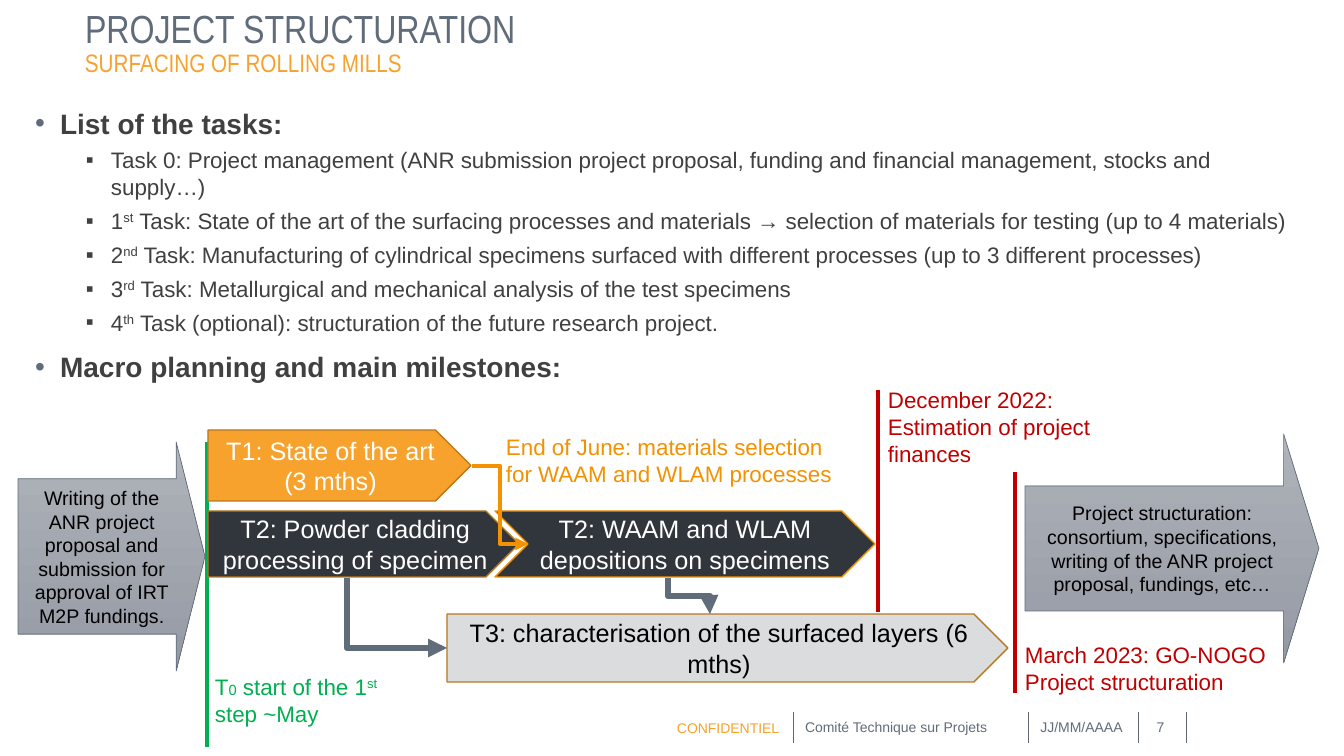
from lxml import etree
from pptx import Presentation
from pptx.dml.color import RGBColor
from pptx.enum.shapes import MSO_CONNECTOR, MSO_SHAPE
from pptx.enum.text import MSO_ANCHOR, MSO_AUTO_SIZE, PP_ALIGN
from pptx.oxml.ns import qn
from pptx.util import Emu, Pt

STRAIGHT, ELBOW = MSO_CONNECTOR.STRAIGHT, MSO_CONNECTOR.ELBOW
PENTAGON, CHEVRON, ARROW = MSO_SHAPE.PENTAGON, MSO_SHAPE.CHEVRON, MSO_SHAPE.RIGHT_ARROW
TOP, MIDDLE, BOTTOM = MSO_ANCHOR.TOP, MSO_ANCHOR.MIDDLE, MSO_ANCHOR.BOTTOM
LEFT, CENTER = PP_ALIGN.LEFT, PP_ALIGN.CENTER

SLIDE_WIDTH, SLIDE_HEIGHT = 1344, 756
EMU_PER_PX = 12192000 / SLIDE_WIDTH
COLORS = {
    "slate": "616C7A", "rule": "606871", "orange": "F6A22D", "deep_orange": "F39100",
    "brown": "B67821", "navy": "31363D", "pale": "DBDCDE", "text": "404040",
    "green": "00B050", "red": "C00000", "white": "FFFFFF", "black": "000000",
    "gray_top": "AFB3BA", "gray_bottom": "949AA4",
}
BULLETS = {
    0: {"char": "•", "margin": 25, "size": 20, "bold": True, "before": 10, "color": "slate"},
    1: {"char": "▪", "margin": 76, "size": 16, "bold": False, "before": 5, "color": "text"},
}
BULLET_HANG = 25
SMALL_SIZE = 10.5

TASKS = [
    (0, "List of the tasks:"),
    (1, "Task 0: Project management (ANR submission project proposal, funding and "
        "financial management, stocks and supply…)"),
    (1, "1|^st| Task: State of the art of the surfacing processes and materials → "
        "selection of materials for testing (up to 4 materials)"),
    (1, "2|^nd| Task: Manufacturing of cylindrical specimens surfaced with different "
        "processes (up to 3 different processes)"),
    (1, "3|^rd| Task: Metallurgical and mechanical analysis of the test specimens"),
    (1, "4|^th| Task (optional): structuration of the future research project."),
    (0, "Macro planning and main milestones:"),
]
FOOTERS = [
    ((795, 707, 231, 40), "Comité Technique sur Projets", LEFT),
    ((1025, 707, 113, 40), "JJ/MM/AAAA", CENTER),
    ((1134, 707, 53, 40), "7", CENTER),
]
FOOTER_RULES = [793, 1028, 1138, 1186]
MILESTONES = [
    ((205, 668, 214, 65), ["T|_0| start of the 1|^st| step ~May"], "green"),
    ((496, 428, 355, 65),
     ["End of June: materials selection for WAAM and WLAM processes"], "deep_orange"),
    ((878, 381, 245, 92), ["December 2022:", "Estimation of project finances"], "red"),
    ((1015, 636, 271, 65), ["March 2023: GO-NOGO Project structuration"], "red"),
]
MILESTONE_LINES = [(207, 442, 747, "green"), (878, 390, 612, "red"), (1015, 472, 693, "red")]
PHASES = [
    ((18, 442, 187, 229), 0.678,
     "Writing of the ANR project proposal and submission for approval of IRT M2P fundings."),
    ((1025, 434, 294, 229), 0.546,
     "Project structuration: consortium, specifications, writing of the ANR project "
     "proposal, fundings, etc…"),
]
STEPS = [
    (PENTAGON, (208, 430, 263, 71), "orange", "brown", "white", "T1: State of the art (3 mths)"),
    (PENTAGON, (208, 511, 311, 66), "navy", "brown", "white",
     "T2: Powder cladding processing of specimen"),
    (PENTAGON, (447, 614, 561, 68), "pale", "brown", "black",
     "T3: characterisation of the surfaced layers (6 mths)"),
    (CHEVRON, (495, 511, 380, 66), "navy", "deep_orange", "white",
     "T2: WAAM and WLAM depositions on specimens"),
]


def px(value):
    return Emu(round(value * EMU_PER_PX))


def rgb(name):
    return RGBColor.from_string(COLORS[name])


class SlideBuilder:
    def __init__(self, presentation, font="Arial"):
        self.slide = presentation.slides.add_slide(presentation.slide_layouts[5])
        self.shapes = self.slide.shapes
        self.font = font

    def add_runs(self, paragraph, text, size, color, bold=False, font=None):
        """Split text at |; a part led by ^ is superscript, one led by _ is small."""
        for part in text.split("|"):
            run = paragraph.add_run()
            run.text = part.lstrip("^_")
            values = {"name": font or self.font, "bold": bold,
                      "size": Pt(SMALL_SIZE if part.startswith("_") else size)}
            for name, value in values.items():
                setattr(run.font, name, value)
            run.font.color.rgb = rgb(color)
            if part.startswith("^"):
                run.font._element.set("baseline", "30000")

    def frame(self, shape, anchor, margins=(10, 5)):
        frame = shape.text_frame
        horizontal, vertical = map(px, margins)
        values = {"word_wrap": True, "auto_size": MSO_AUTO_SIZE.NONE, "vertical_anchor": anchor,
                  "margin_left": horizontal, "margin_right": horizontal,
                  "margin_top": vertical, "margin_bottom": vertical}
        for name, value in values.items():
            setattr(frame, name, value)
        return frame

    def title(self, box, text, size, color, font):
        shape = self.shapes.title
        for name, value in zip(("left", "top", "width", "height"), box):
            setattr(shape, name, px(value))
        paragraph = self.frame(shape, MIDDLE, (0, 0)).paragraphs[0]
        paragraph.alignment = LEFT
        paragraph.line_spacing = 0.9
        self.add_runs(paragraph, text, size, color, font=font)

    def text(self, box, lines, size, color, align=LEFT, anchor=TOP, margins=(10, 5), font=None):
        frame = self.frame(self.shapes.add_textbox(*map(px, box)), anchor, margins)
        for index, line in enumerate(lines):
            paragraph = frame.add_paragraph() if index else frame.paragraphs[0]
            paragraph.alignment = align
            self.add_runs(paragraph, line, size, color, font=font)

    def bullets(self, box, items):
        frame = self.frame(self.shapes.add_textbox(*map(px, box)), TOP)
        for index, (level, text) in enumerate(items):
            style = BULLETS[level]
            paragraph = frame.add_paragraph() if index else frame.paragraphs[0]
            paragraph.level = level
            properties = paragraph._p.get_or_add_pPr()
            properties.set("marL", str(px(style["margin"])))
            properties.set("indent", str(-px(BULLET_HANG)))
            color = etree.SubElement(properties, qn("a:buClr"))
            etree.SubElement(color, qn("a:srgbClr"), val=COLORS[style["color"]])
            etree.SubElement(properties, qn("a:buFont"), typeface=self.font)
            etree.SubElement(properties, qn("a:buChar"), char=style["char"])
            if index:
                paragraph.space_before = Pt(style["before"])
            self.add_runs(paragraph, text, style["size"], "text", style["bold"])

    def block(self, kind, box, text, size, color, line, line_width, fill=None, adjustments=()):
        """Add a preset shape; without a fill colour it gets the gray gradient."""
        shape = self.shapes.add_shape(kind, *map(px, box))
        shape.shadow.inherit = False
        for index, value in enumerate(adjustments):
            shape.adjustments[index] = value
        if fill:
            shape.fill.solid()
            shape.fill.fore_color.rgb = rgb(fill)
        else:
            shape.fill.gradient()
            shape.fill.gradient_angle = 270
            for stop, name in zip(shape.fill.gradient_stops, ("gray_top", "gray_bottom")):
                stop.color.rgb = rgb(name)
        shape.line.color.rgb = rgb(line)
        shape.line.width = Pt(line_width)
        paragraph = self.frame(shape, MIDDLE).paragraphs[0]
        paragraph.alignment = CENTER
        self.add_runs(paragraph, text, size, color)

    def line(self, begin, end, color, width, kind=STRAIGHT):
        connector = self.shapes.add_connector(kind, *map(px, (*begin, *end)))
        connector.line.color.rgb = rgb(color)
        connector.line.width = Pt(width)
        etree.SubElement(connector._element.spPr, qn("a:effectLst"))
        return connector

    def elbow(self, begin, end, color, width, downward=False, preset="bentConnector3"):
        """Draw a bent arrow; a downward one is a mirrored box turned by 270 degrees."""
        if downward:
            (x1, y1), (x2, y2) = begin, end
            middle_x, middle_y = (x1 + x2) / 2, (y1 + y2) / 2
            half_width, half_height = (y2 - y1) / 2, (x2 - x1) / 2
            begin = middle_x + half_width, middle_y - half_height
            end = middle_x - half_width, middle_y + half_height
        connector = self.line(begin, end, color, width, ELBOW)
        properties = connector._element.spPr
        properties.find(qn("a:prstGeom")).set("prst", preset)
        if downward:
            properties.find(qn("a:xfrm")).set("rot", "16200000")
        etree.SubElement(connector.get_or_add_ln(), qn("a:tailEnd"), type="triangle")


def main():
    presentation = Presentation()
    presentation.slide_width, presentation.slide_height = px(SLIDE_WIDTH), px(SLIDE_HEIGHT)
    builder = SlideBuilder(presentation)

    builder.title((85, 14, 1235, 34), "PROJECT STRUCTURATION", 28, "slate", "Arial Narrow")
    builder.text((85, 49, 1235, 27), ["SURFACING OF ROLLING MILLS"], 18, "orange",
                 anchor=MIDDLE, margins=(0, 0), font="Arial Narrow")
    builder.bullets((25, 101, 1294, 298), TASKS)

    builder.text((667, 719, 133, 17), ["CONFIDENTIEL"], 10, "orange",
                 anchor=BOTTOM, margins=(10, 0))
    for x in FOOTER_RULES:
        builder.line((x, 743), (x, 712), "rule", 0.5)
    for box, text, align in FOOTERS:
        builder.text(box, [text], 10, "slate", align, MIDDLE, (10, 0))

    for x, top, bottom, color in MILESTONE_LINES:
        builder.line((x, top), (x, bottom), color, 3)
    for box, body_height, text in PHASES:
        builder.block(ARROW, box, text, 14, "black", "slate", 0.5,
                      adjustments=(body_height, 0.154))
    for kind, box, fill, line, color, text in STEPS:
        builder.block(kind, box, text, 18, color, line, 1, fill)
    for box, lines, color in MILESTONES:
        builder.text(box, lines, 16, color)

    builder.elbow((347, 578), (447, 648), "slate", 4.5, True, "bentConnector2")
    builder.elbow((472, 466), (528, 544), "deep_orange", 3)
    builder.elbow((668, 578), (710, 614), "slate", 4.5, True)
    presentation.save("out.pptx")


if __name__ == "__main__":
    main()
